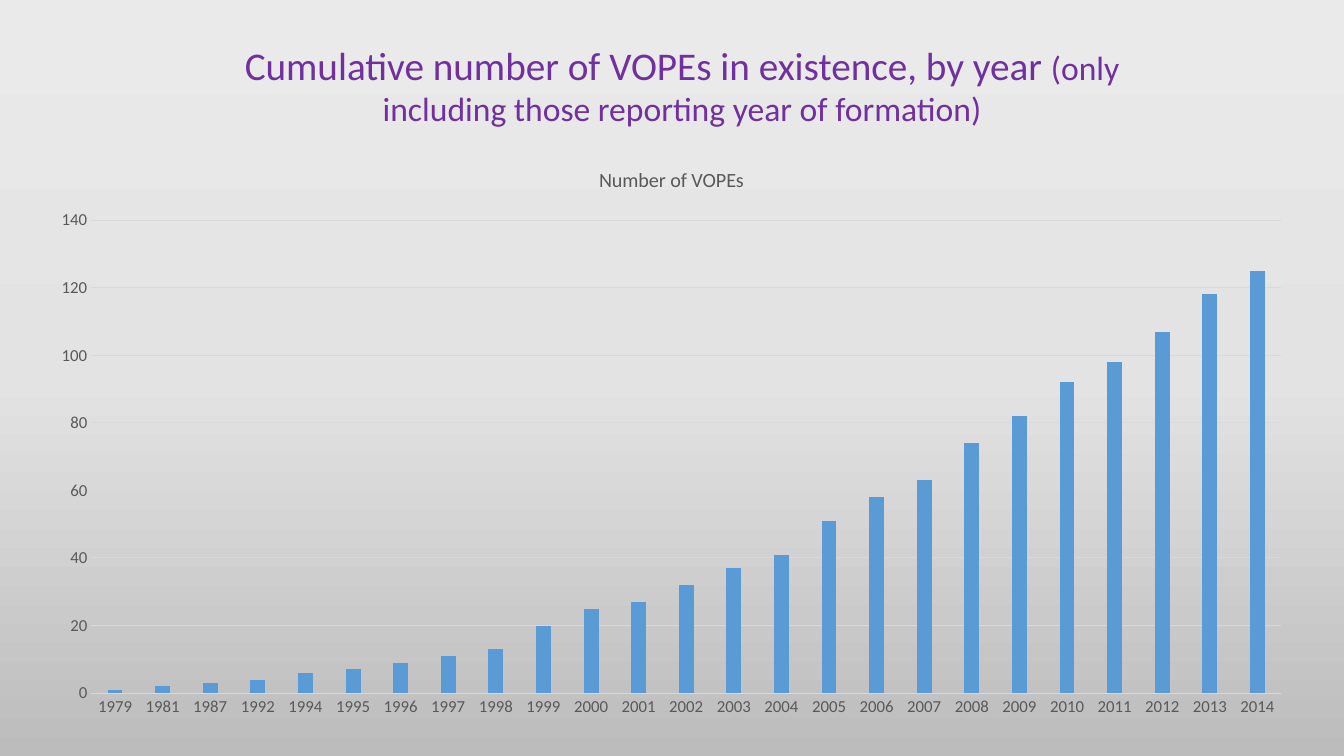
from copy import deepcopy
from dataclasses import dataclass

from pptx import Presentation
from pptx.chart.data import CategoryChartData
from pptx.dml.color import RGBColor
from pptx.enum.chart import XL_CHART_TYPE, XL_TICK_MARK
from pptx.enum.text import MSO_AUTO_SIZE, PP_ALIGN
from pptx.util import Inches, Pt


@dataclass(frozen=True)
class Theme:
    """Colours, font and type sizes of the slide."""
    font: str = "Calibri"
    heading: str = "7030A0"
    label: str = "595959"
    rule: str = "D9D9D9"
    bar: str = "5B9BD5"
    backdrop: tuple = ("EBEAEA", "E4E3E3", "BDBCBC")
    heading_size: float = 28
    remark_size: float = 24
    chart_title_size: float = 14.4
    axis_size: float = 12
    rule_width: float = 0.75


THEME = Theme()
YEARS = [1979, 1981, 1987, 1992, *range(1994, 2015)]
VOPE_COUNTS = [1, 2, 3, 4, 6, 7, 9, 11, 13, 20, 25, 27, 32, 37, 41, 51, 58,
               63, 74, 82, 92, 98, 107, 118, 125]
SERIES_NAME = "Number of VOPEs"


def style_font(font, size, color):
    """Apply the theme font with a size and colour."""
    font.name = THEME.font
    font.size = Pt(size)
    font.bold = False
    font.color.rgb = RGBColor.from_string(color)


def style_line(line):
    """Draw a line as a thin grey rule."""
    line.color.rgb = RGBColor.from_string(THEME.rule)
    line.width = Pt(THEME.rule_width)


def paint_backdrop(slide):
    """Fill the background with evenly spaced colours from top to bottom."""
    fill = slide.background.fill
    fill.gradient()
    fill.gradient_angle = 270
    first_stop = slide.background._cSld.xpath(".//a:gsLst/a:gs")[0]
    first_stop.addnext(deepcopy(first_stop))
    last = len(THEME.backdrop) - 1
    for index, (stop, color) in enumerate(zip(fill.gradient_stops, THEME.backdrop)):
        stop.position = index / last
        stop.color.rgb = RGBColor.from_string(color)


def add_heading(slide, statement, remark):
    """Add the centred heading followed by a smaller remark."""
    heading = slide.shapes.add_textbox(
        Inches(2.28), Inches(0.36), Inches(8.97), Inches(0.98)).text_frame
    heading.word_wrap = True
    heading.auto_size = MSO_AUTO_SIZE.SHAPE_TO_FIT_TEXT
    paragraph = heading.paragraphs[0]
    paragraph.alignment = PP_ALIGN.CENTER
    for text, size in ((statement, THEME.heading_size), (remark, THEME.remark_size)):
        run = paragraph.add_run()
        run.text = text
        style_font(run.font, size, THEME.heading)


def style_axis(axis):
    """Give an axis grey labels and no tick marks."""
    axis.major_tick_mark = XL_TICK_MARK.NONE
    axis.minor_tick_mark = XL_TICK_MARK.NONE
    style_font(axis.tick_labels.font, THEME.axis_size, THEME.label)


def add_growth_chart(slide):
    """Add the column chart of cumulative counts by year."""
    growth = CategoryChartData(number_format="0")
    growth.categories = [str(year) for year in YEARS]
    growth.add_series(SERIES_NAME, VOPE_COUNTS)
    chart = slide.shapes.add_chart(
        XL_CHART_TYPE.COLUMN_CLUSTERED, Inches(0.36), Inches(1.44),
        Inches(12.6), Inches(5.79), growth).chart
    style_font(chart.font, THEME.axis_size, "000000")
    chart.has_legend = False
    chart.has_title = True
    title = chart.chart_title.text_frame
    title.text = SERIES_NAME
    style_font(title.paragraphs[0].runs[0].font, THEME.chart_title_size, THEME.label)

    style_axis(chart.category_axis)
    style_line(chart.category_axis.format.line)
    counts = chart.value_axis
    style_axis(counts)
    counts.format.line.fill.background()
    counts.has_major_gridlines = True
    style_line(counts.major_gridlines.format.line)
    counts.tick_labels.number_format = "0"
    counts.tick_labels.number_format_is_linked = False
    counts.minimum_scale, counts.maximum_scale, counts.major_unit = 0, 140, 20

    plot = chart.plots[0]
    plot.vary_by_categories = False
    plot.gap_width = 219
    plot.overlap = -27
    bars = plot.series[0].format.fill
    bars.solid()
    bars.fore_color.rgb = RGBColor.from_string(THEME.bar)


def main():
    """Build and save the slide."""
    presentation = Presentation()
    presentation.slide_width = Inches(13.33)
    presentation.slide_height = Inches(7.5)
    slide = presentation.slides.add_slide(presentation.slide_layouts[6])
    paint_backdrop(slide)
    add_heading(slide, "Cumulative number of VOPEs in existence, by year ",
                "(only including those reporting year of formation)")
    add_growth_chart(slide)
    presentation.save("out.pptx")


if __name__ == "__main__":
    main()
